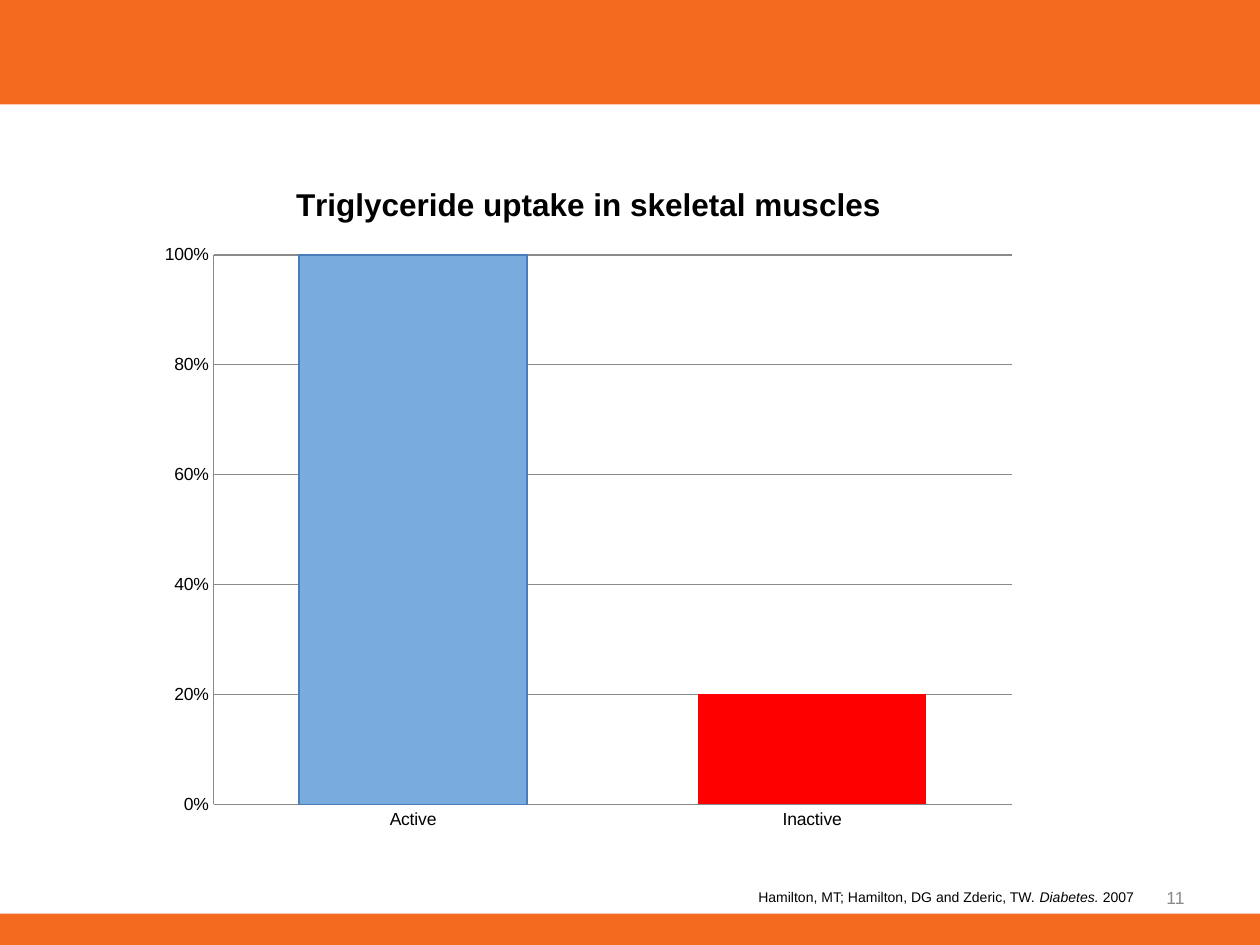
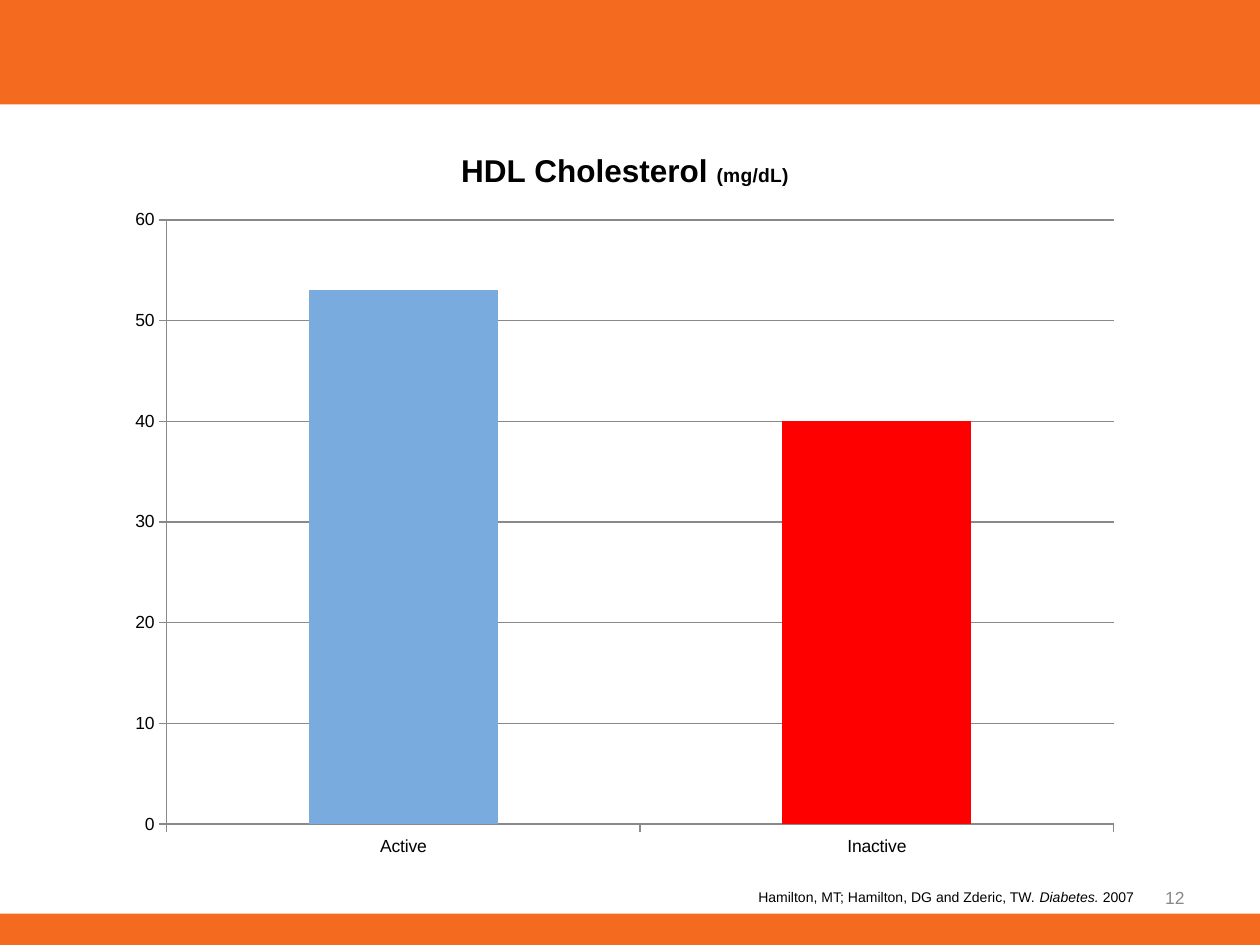
from lxml import etree
from pptx import Presentation
from pptx import util as u
from pptx.chart import data as chart_data
from pptx.dml.color import RGBColor
from pptx.enum import chart as chart_enum, shapes, text
from pptx.oxml import ns

ORANGE = RGBColor(0xF4, 0x6A, 0x1F)
BLUE = RGBColor(0x7A, 0xAB, 0xDE)
DARK_BLUE = RGBColor(0x4A, 0x7E, 0xBB)
RED = RGBColor(0xFF, 0x00, 0x00)
BLACK = RGBColor(0x00, 0x00, 0x00)
GREY = RGBColor(0x89, 0x89, 0x89)
FONT = "Arial"

PAGE_WIDTH, PAGE_HEIGHT = 10, 7.5
BANDS = [(0, 0.83), (7.25, 0.25)]  # top, height
NUMBER_BOX = (7.17, 6.92, 2.33, 0.4)
SOURCE_BOX = (5.92, 7, 3.23, 0.24)
SOURCE = [("Hamilton, MT; Hamilton, DG and Zderic, TW. ", False),
          ("Diabetes.", True), (" 2007", False)]


def add_span(para, words, size, color=BLACK, bold=False, italic=False):
    span = para.add_run()
    span.text = words
    font = span.font
    font.name, font.size, font.bold, font.italic = FONT, u.Pt(size), bold, italic
    font.color.rgb = color


def add_text(page, box, spans, size, color=BLACK, align=text.PP_ALIGN.LEFT,
             anchor=text.MSO_ANCHOR.TOP, wrap=True):
    """Write one paragraph of (words, italic) spans in a text box."""
    frame = page.shapes.add_textbox(*map(u.Inches, box)).text_frame
    frame.word_wrap = wrap
    frame.vertical_anchor = anchor
    para = frame.paragraphs[0]
    para.alignment = align
    for words, italic in spans:
        add_span(para, words, size, color, italic=italic)


def add_bands(page):
    for top, height in BANDS:
        band = page.shapes.add_shape(
            shapes.MSO_SHAPE.RECTANGLE, 0, u.Inches(top),
            u.Inches(PAGE_WIDTH), u.Inches(height))
        band.shadow.inherit = False
        band.fill.solid()
        band.fill.fore_color.rgb = ORANGE
        band.line.fill.background()


def add_footer(page, number):
    add_text(page, NUMBER_BOX, [(str(number), False)], 10, GREY,
             align=text.PP_ALIGN.RIGHT, anchor=text.MSO_ANCHOR.MIDDLE)
    add_text(page, SOURCE_BOX, SOURCE, 8, wrap=False)


def place_plot(chart, plot_box):
    """Fix the inner plot area as fractions of the chart frame."""
    area = chart._chartSpace.find(".//" + ns.qn("c:plotArea"))
    for old in area.findall(ns.qn("c:layout")):
        area.remove(old)
    layout = etree.Element(ns.qn("c:layout"))
    manual = etree.SubElement(layout, ns.qn("c:manualLayout"))
    settings = [("layoutTarget", "inner"), ("xMode", "edge"), ("yMode", "edge")]
    for name, value in settings + list(zip("xywh", plot_box)):
        etree.SubElement(manual, ns.qn("c:" + name)).set("val", str(value))
    area.insert(0, layout)


def style_line(line, color, width=0.75):
    line.color.rgb = color
    line.width = u.Pt(width)


def add_bar_chart(page, box, plot_box, title, values, gap, overlap=0, top=60,
                  step=10, number_format="General", ticks=True, outline=None):
    data = chart_data.CategoryChartData(number_format=number_format)
    data.categories = ["Active", "Inactive"]
    data.add_series("Series 1", values)
    chart = page.shapes.add_chart(
        chart_enum.XL_CHART_TYPE.COLUMN_CLUSTERED, *map(u.Inches, box), data).chart
    chart.has_legend = False
    chart.font.name, chart.font.size = FONT, u.Pt(10)
    chart.font.color.rgb = BLACK
    place_plot(chart, plot_box)

    # Title
    chart.has_title = True
    chart.chart_title.include_in_layout = False
    para = chart.chart_title.text_frame.paragraphs[0]
    for words, size in title:
        add_span(para, words, size, bold=True)

    # Axes
    tick = chart_enum.XL_TICK_MARK.OUTSIDE if ticks else chart_enum.XL_TICK_MARK.NONE
    for axis in (chart.category_axis, chart.value_axis):
        axis.major_tick_mark = tick
        axis.minor_tick_mark = chart_enum.XL_TICK_MARK.NONE
        style_line(axis.format.line, GREY)
    scale = chart.value_axis
    scale.minimum_scale, scale.maximum_scale, scale.major_unit = 0, top, step
    scale.tick_labels.number_format = number_format
    scale.tick_labels.number_format_is_linked = False
    scale.has_major_gridlines = True
    style_line(scale.major_gridlines.format.line, GREY)

    # Bars
    plot = chart.plots[0]
    plot.vary_by_categories = False
    plot.gap_width, plot.overlap = gap, overlap
    series = plot.series[0]
    series.invert_if_negative = False
    for index, color in enumerate((BLUE, RED)):
        look = series.points[index].format
        look.fill.solid()
        look.fill.fore_color.rgb = color
        if outline and color == BLUE:
            style_line(look.line, outline)
        else:
            look.line.fill.background()


def add_chart_page(deck, number, **chart_options):
    page = deck.slides.add_slide(deck.slide_layouts[6])
    add_bands(page)
    add_bar_chart(page, **chart_options)
    add_footer(page, number)


def main():
    deck = Presentation()
    deck.slide_width = u.Inches(PAGE_WIDTH)
    deck.slide_height = u.Inches(PAGE_HEIGHT)
    add_chart_page(
        deck, 11, box=(1.17, 1.25, 7, 5.45), plot_box=(0.075, 0.142, 0.905, 0.8),
        title=[("Triglyceride uptake in skeletal muscles", 18)],
        values=(1, 0.2), gap=75, overlap=-25, top=1, step=0.2,
        number_format="0%", ticks=False, outline=DARK_BLUE)
    add_chart_page(
        deck, 12, box=(0.92, 1, 8.08, 5.92), plot_box=(0.05, 0.126, 0.93, 0.81),
        title=[("HDL Cholesterol ", 18), ("(mg/dL)", 11)],
        values=(53, 40), gap=150)
    deck.save("out.pptx")


if __name__ == "__main__":
    main()
